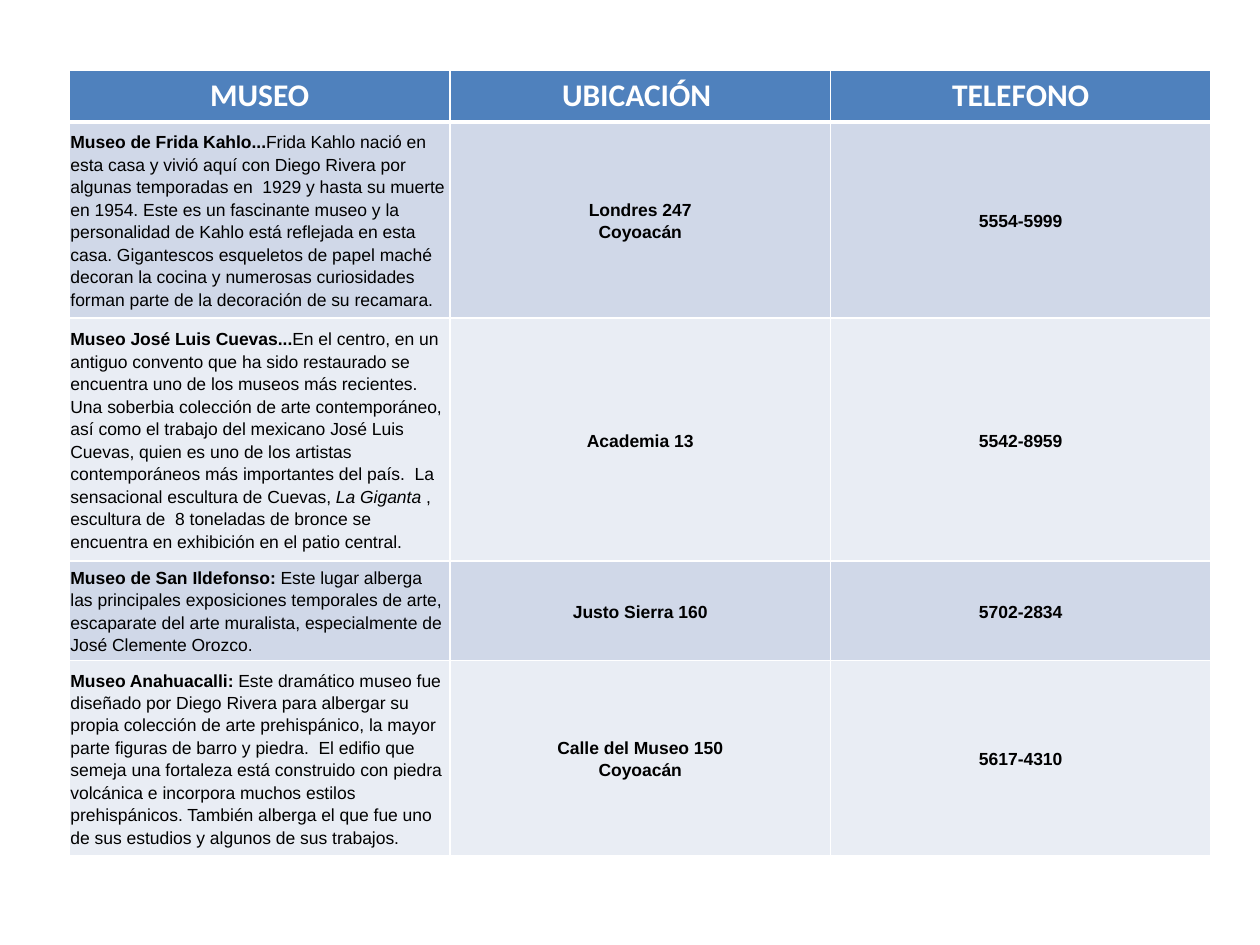
import copy

import pptx
import pptx.dml.color
import pptx.enum.text
import pptx.oxml
import pptx.oxml.ns
import pptx.util
from pptx.util import Cm, Pt

COLORS = {
    "header": "4F81BD",
    "odd": "D0D8E8",
    "even": "E9EDF4",
    "white": "FFFFFF",
    "text": "000000",
}
HEADERS = ["MUSEO", "UBICACIÓN ", "TELEFONO"]
ROW_HEIGHTS = [1.04, 3.95, 4.9, 2, 3.95]
MUSEUMS = [
    {
        "description": [
            ("Museo de Frida Kahlo...", "bold"),
            ("Frida Kahlo nació en esta casa y vivió aquí con Diego Rivera por algunas "
             "temporadas en  1929 y hasta su muerte en 1954. Este es un fascinante museo y la "
             "personalidad de Kahlo está reflejada en esta casa. Gigantescos esqueletos de "
             "papel maché decoran la cocina y numerosas curiosidades forman parte de la "
             "decoración de su recamara. ", "plain"),
        ],
        "location": "Londres 247\nCoyoacán",
        "phone": "5554-5999",
        "space_after": 0,
    },
    {
        "description": [
            ("Museo José Luis Cuevas...", "bold"),
            ("En el centro, en un antiguo convento que ha sido restaurado se encuentra uno de "
             "los museos más recientes. Una soberbia colección de arte contemporáneo, así como "
             "el trabajo del mexicano José Luis Cuevas, quien es uno de los artistas "
             "contemporáneos más importantes del país.  La sensacional escultura de "
             "Cuevas, ", "plain"),
            ("La Giganta", "italic"),
            (" , escultura de  8 toneladas de bronce se encuentra en exhibición en el "
             "patio central.", "plain"),
        ],
        "location": "Academia 13",
        "phone": "5542-8959",
        "space_after": 0,
    },
    {
        "description": [
            ("Museo de San Ildefonso:", "bold"),
            (" Este lugar alberga las principales exposiciones temporales de arte, escaparate "
             "del arte muralista, especialmente de José Clemente Orozco. ", "plain"),
        ],
        "location": "Justo Sierra 160",
        "phone": "5702-2834",
        "space_after": 10,
    },
    {
        "description": [
            ("Museo Anahuacalli:", "bold"),
            (" Este dramático museo fue diseñado por Diego Rivera para albergar su propia "
             "colección de arte prehispánico, la mayor parte figuras de barro y piedra.  El "
             "edifio que semeja una fortaleza está construido con piedra volcánica e incorpora "
             "muchos estilos prehispánicos. También alberga el que fue uno de sus estudios y "
             "algunos de sus trabajos.", "plain"),
        ],
        "location": "Calle del Museo 150\nCoyoacán",
        "phone": "5617-4310",
        "space_after": 10,
    },
]


def rgb(name):
    """Return the named colour."""
    return pptx.dml.color.RGBColor.from_string(COLORS[name])


def style_cell(cell, fill, top=1, bottom=1):
    """Fill a cell and draw its white borders, with widths in points."""
    properties = cell._tc.get_or_add_tcPr()
    for side, width in (("L", 1), ("R", 1), ("T", top), ("B", bottom)):
        properties.append(pptx.oxml.parse_xml(
            f'<a:ln{side} {pptx.oxml.ns.nsdecls("a")} w="{Pt(width)}"><a:solidFill>'
            f'<a:srgbClr val="{COLORS["white"]}"/></a:solidFill></a:ln{side}>'))
    cell.fill.solid()
    cell.fill.fore_color.rgb = rgb(fill)


def add_runs(paragraph, runs, size, font, color):
    """Write (text, style) runs, keeping line breaks at the size of their text."""
    for text, style in runs:
        for index, line in enumerate(text.split("\n")):
            if index:
                paragraph.add_line_break()
                line_break = paragraph._p[-1]
            run = paragraph.add_run()
            run.text = line
            run.font.size = Pt(size)
            run.font.name = font
            run.font.bold = style == "bold"
            run.font.italic = style == "italic"
            run.font.color.rgb = rgb(color)
            if index:
                line_break.insert(0, copy.deepcopy(run._r.rPr))


def fill_header(cell, text):
    """Write one heading cell."""
    style_cell(cell, "header", bottom=3)
    paragraph = cell.text_frame.paragraphs[0]
    paragraph.alignment = pptx.enum.text.PP_ALIGN.CENTER
    add_runs(paragraph, [(text, "bold")], 18, "Calibri", "white")


def fill_body(cell, runs, fill, top, centered, space_after):
    """Write one body cell."""
    style_cell(cell, fill, top=top)
    cell.margin_left = cell.margin_right = cell.margin_top = cell.margin_bottom = Cm(0.02)
    cell.vertical_anchor = pptx.enum.text.MSO_ANCHOR.MIDDLE
    paragraph = cell.text_frame.paragraphs[0]
    alignment = pptx.enum.text.PP_ALIGN
    paragraph.alignment = alignment.CENTER if centered else alignment.LEFT
    paragraph.line_spacing = 1.15
    paragraph.space_after = Pt(space_after)
    add_runs(paragraph, runs, 10, "Arial", "text")


def add_museum_table(slide, left, top, width):
    """Add the table of museums with three equal columns."""
    height = Cm(sum(ROW_HEIGHTS))
    table = slide.shapes.add_table(
        len(ROW_HEIGHTS), len(HEADERS), left, top, width, height).table
    for column in table.columns:
        column.width = int(width / len(HEADERS))
    for row, row_height in zip(table.rows, ROW_HEIGHTS):
        row.height = Cm(row_height)
    for column_index, text in enumerate(HEADERS):
        fill_header(table.cell(0, column_index), text)
    for row_index, museum in enumerate(MUSEUMS, start=1):
        fill = "odd" if row_index % 2 else "even"
        border = 3 if row_index == 1 else 1
        space_after = museum["space_after"]
        contents = [
            (museum["description"], space_after),
            ([(museum["location"], "bold")], space_after),
            ([(museum["phone"], "bold")], 0),
        ]
        for column_index, (runs, space) in enumerate(contents):
            fill_body(table.cell(row_index, column_index), runs, fill, border,
                      column_index > 0, space)


def main():
    """Build and save the presentation."""
    presentation = pptx.Presentation()
    presentation.slide_width = Cm(25.4)
    presentation.slide_height = Cm(19.05)
    slide = presentation.slides.add_slide(presentation.slide_layouts[6])
    add_museum_table(slide, Cm(1.4), Cm(1.42), Cm(23.01))
    presentation.save("out.pptx")


if __name__ == "__main__":
    main()
